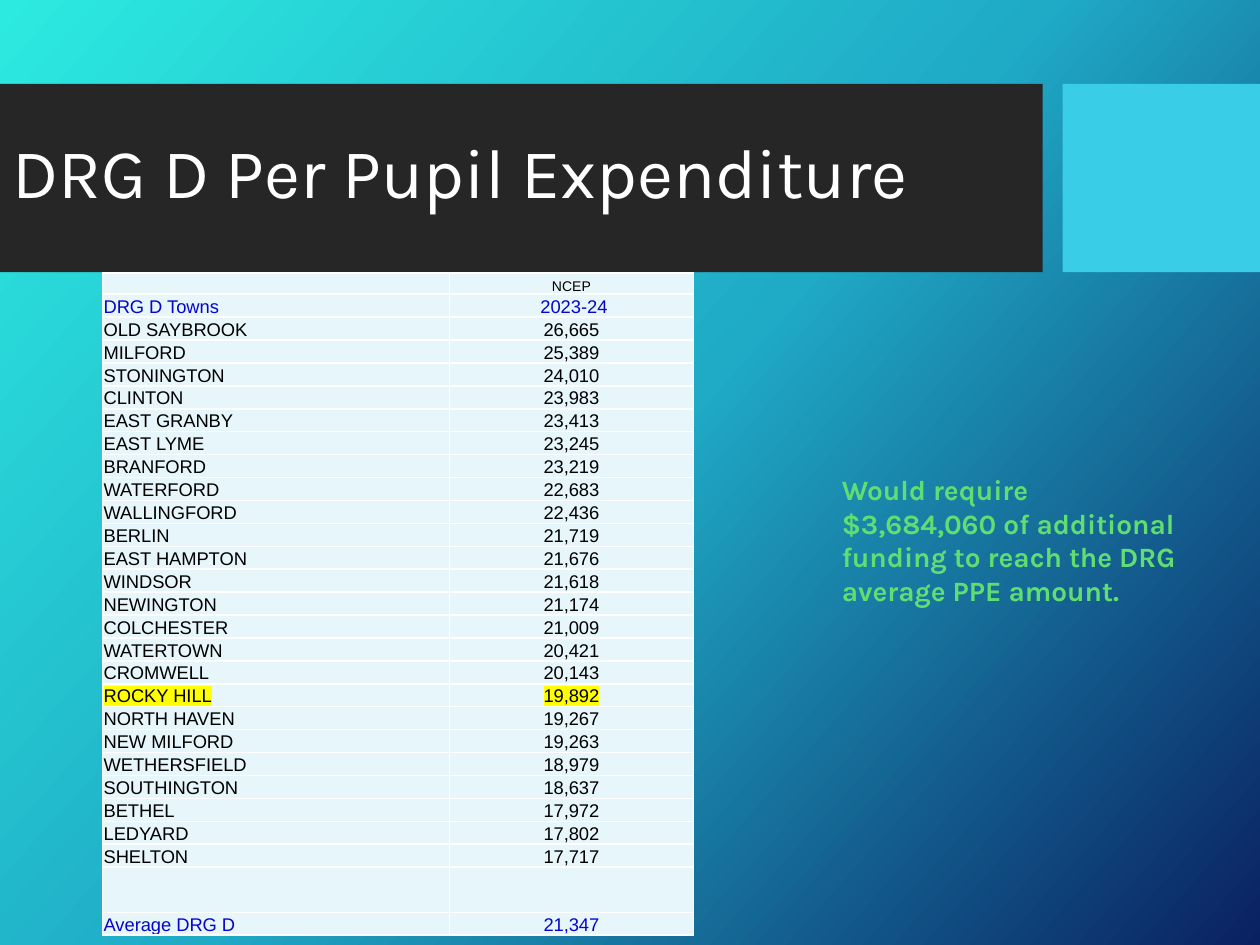
from copy import deepcopy
from dataclasses import dataclass
from typing import Any

from lxml import etree
from pptx import Presentation
from pptx.dml.color import RGBColor
from pptx.enum.shapes import MSO_SHAPE
from pptx.enum.text import MSO_ANCHOR, MSO_AUTO_SIZE, PP_ALIGN
from pptx.oxml.ns import qn
from pptx.util import Cm, Pt

RECTANGLE = MSO_SHAPE.RECTANGLE
MIDDLE, BOTTOM = MSO_ANCHOR.MIDDLE, MSO_ANCHOR.BOTTOM
LEFT, CENTER = PP_ALIGN.LEFT, PP_ALIGN.CENTER
GROW = MSO_AUTO_SIZE.SHAPE_TO_FIT_TEXT

WHITE, BLACK, BLUE, YELLOW = "FFFFFF", "000000", "0505CB", "FFFF00"
CELL_FILL = "E7F6FA"
BACKGROUND = [(0, "2CEAE0"), (0.5, "1FAAC6"), (1, "0A2161")]
TABLE_HEIGHT, HEADER_HEIGHT, GAP_HEIGHT = 13.36, 0.43, 0.91
COLUMN_WIDTHS = (6.99, 4.92)

TOWNS = [
    ("OLD SAYBROOK", "26,665"), ("MILFORD", "25,389"), ("STONINGTON", "24,010"),
    ("CLINTON", "23,983"), ("EAST GRANBY", "23,413"), ("EAST LYME", "23,245"),
    ("BRANFORD", "23,219"), ("WATERFORD", "22,683"), ("WALLINGFORD", "22,436"),
    ("BERLIN", "21,719"), ("EAST HAMPTON", "21,676"), ("WINDSOR", "21,618"),
    ("NEWINGTON", "21,174"), ("COLCHESTER", "21,009"), ("WATERTOWN", "20,421"),
    ("CROMWELL", "20,143"), ("ROCKY HILL", "19,892"), ("NORTH HAVEN", "19,267"),
    ("NEW MILFORD", "19,263"), ("WETHERSFIELD", "18,979"), ("SOUTHINGTON", "18,637"),
    ("BETHEL", "17,972"), ("LEDYARD", "17,802"), ("SHELTON", "17,717"),
]


@dataclass(frozen=True)
class Band:
    left: float
    width: float
    color: str


@dataclass(frozen=True)
class Row:
    label: str
    amount: str
    color: str = BLACK
    size: float = 10.5
    height: float | None = None
    highlight: str | None = None


BANDS = [Band(0, 21.02, "262626"), Band(21.42, 3.98, "39CDE7")]
ROWS = [
    Row("", "NCEP", size=8, height=HEADER_HEIGHT),
    Row("DRG D Towns", " 2023-24", BLUE),
    *(Row(town, amount, highlight=YELLOW if town == "ROCKY HILL" else None)
      for town, amount in TOWNS),
    Row("", "", height=GAP_HEIGHT),
    Row("Average DRG D", "21,347", BLUE),
]


def rgb(color: str) -> RGBColor:
    return RGBColor.from_string(color)


def apply(target: Any, values: dict[str, Any]) -> None:
    for name, value in values.items():
        setattr(target, name, value)


def add_color(parent: Any, tag: str, color: str) -> None:
    holder = etree.SubElement(parent, qn(tag))
    etree.SubElement(holder, qn("a:srgbClr"), val=color)


def paint_background(slide: Any) -> None:
    fill = slide.background.fill
    fill.gradient()
    fill.gradient_angle = 360 - 42
    stop_list = slide.element.find(".//" + qn("a:gsLst"))
    stop_list.append(deepcopy(stop_list[0]))
    for stop, (position, color) in zip(fill.gradient_stops, BACKGROUND):
        stop.position = position
        stop.color.rgb = rgb(color)


def draw_band(slide: Any, band: Band, depth: int) -> None:
    bar = slide.shapes.add_shape(RECTANGLE, Cm(band.left), Cm(1.69), Cm(band.width), Cm(3.8))
    bar.shadow.inherit = False
    bar.fill.solid()
    bar.fill.fore_color.rgb = rgb(band.color)
    bar.line.fill.background()
    slide.shapes.title.element.getparent().insert(depth, bar.element)


def write(paragraph: Any, text: str, font: str, size: float, color: str,
          bold: bool = False, highlight: str | None = None) -> None:
    run = paragraph.add_run()
    run.text = text
    apply(run.font, {"size": Pt(size), "bold": bold})
    run.font.color.rgb = rgb(color)
    if highlight:
        add_color(run.font._element, "a:highlight", highlight)
    run.font.name = font


def draw_title(slide: Any) -> None:
    title = slide.shapes.title
    apply(title, {"left": Cm(0), "top": Cm(2.36), "width": Cm(21.64), "height": Cm(2.36)})
    apply(title.text_frame, {"vertical_anchor": MIDDLE, "word_wrap": True})
    heading = title.text_frame.paragraphs[0]
    apply(heading, {"alignment": LEFT, "line_spacing": 0.9})
    write(heading, "DRG D Per Pupil Expenditure", "Karla", 40, WHITE)


def draw_funding_note(slide: Any) -> None:
    note = slide.shapes.add_textbox(Cm(16.72), Cm(9.4), Cm(7.42), Cm(3))
    apply(note.text_frame, {"word_wrap": True, "auto_size": GROW})
    write(note.text_frame.paragraphs[0],
          "Would require $3,684,060 of additional funding to reach the DRG average PPE amount.",
          "Karla", 16, "60DE72", bold=True)


def fill_cell(cell: Any, row: Row, text: str, alignment: Any) -> None:
    apply(cell, {"vertical_anchor": BOTTOM, "margin_left": Cm(0.02), "margin_right": Cm(0.02),
                 "margin_top": Cm(0), "margin_bottom": Cm(0)})
    properties = cell._tc.get_or_add_tcPr()
    for side in ("a:lnL", "a:lnR", "a:lnT", "a:lnB"):
        border = etree.SubElement(properties, qn(side), w=str(Pt(1)))
        add_color(border, "a:solidFill", WHITE)
    cell.fill.solid()
    cell.fill.fore_color.rgb = rgb(CELL_FILL)
    paragraph = cell.text_frame.paragraphs[0]
    paragraph.alignment = alignment
    if text:
        write(paragraph, text, "Arial", row.size, row.color, highlight=row.highlight)
    else:
        etree.SubElement(paragraph._p, qn("a:endParaRPr"), sz=str(int(row.size * 100)))


def draw_expenditures(slide: Any) -> None:
    table = slide.shapes.add_table(len(ROWS), len(COLUMN_WIDTHS), Cm(2.07), Cm(5.5),
                                   Cm(sum(COLUMN_WIDTHS)), Cm(TABLE_HEIGHT)).table
    apply(table, {"first_row": False, "horz_banding": False})
    for column, width in zip(table.columns, COLUMN_WIDTHS):
        column.width = Cm(width)
    fixed = [row.height for row in ROWS if row.height]
    town_height = (TABLE_HEIGHT - sum(fixed)) / (len(ROWS) - len(fixed))
    for line, row in zip(table.rows, ROWS):
        line.height = Cm(row.height or town_height)
        for cell, text, alignment in zip(line.cells, (row.label, row.amount), (LEFT, CENTER)):
            fill_cell(cell, row, text, alignment)


def main() -> None:
    deck = Presentation()
    apply(deck, {"slide_width": Cm(25.4), "slide_height": Cm(19.05)})
    slide = deck.slides.add_slide(deck.slide_layouts[5])
    paint_background(slide)
    for depth, band in enumerate(BANDS, start=2):
        draw_band(slide, band, depth)
    draw_title(slide)
    draw_funding_note(slide)
    draw_expenditures(slide)
    deck.save("out.pptx")


if __name__ == "__main__":
    main()
